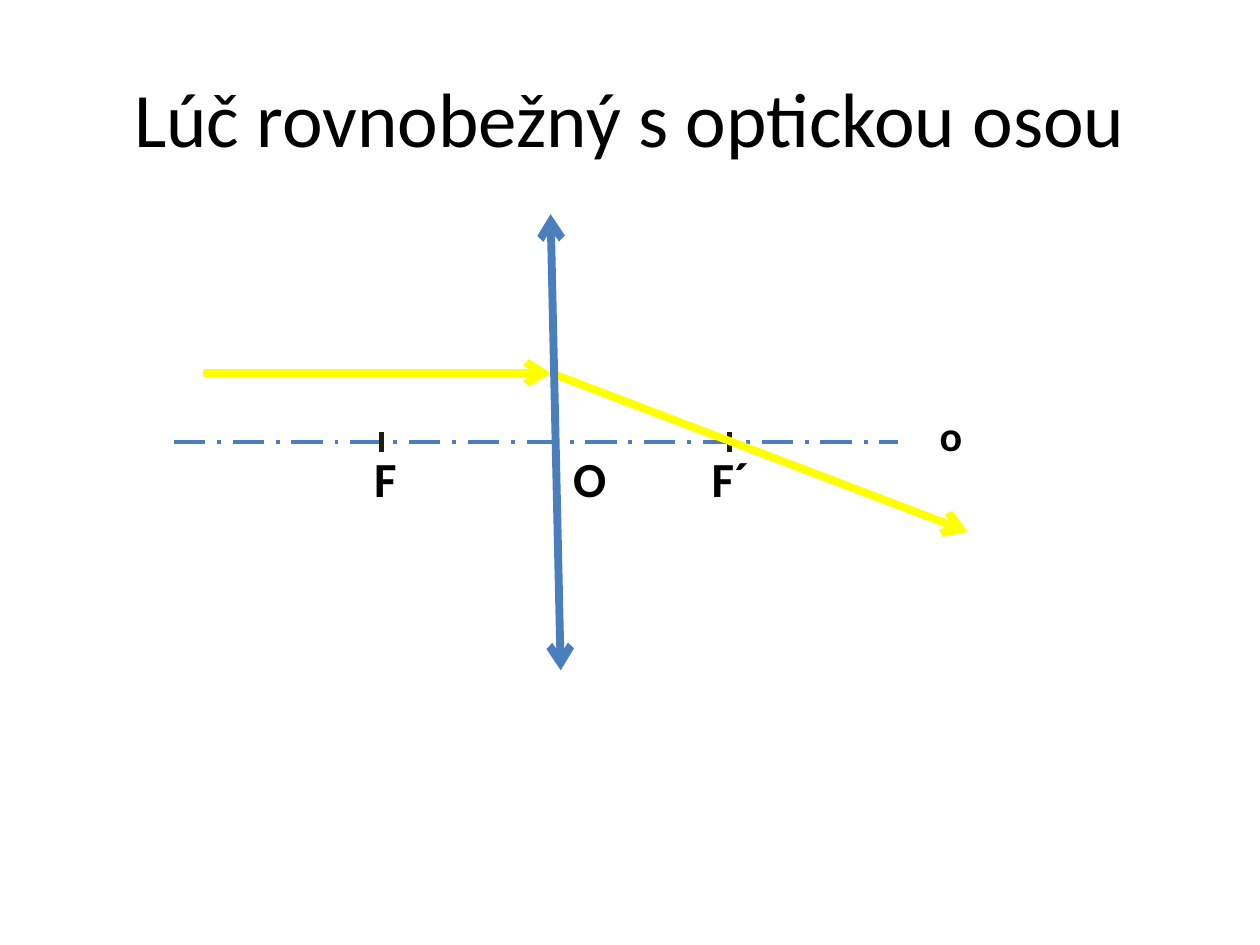
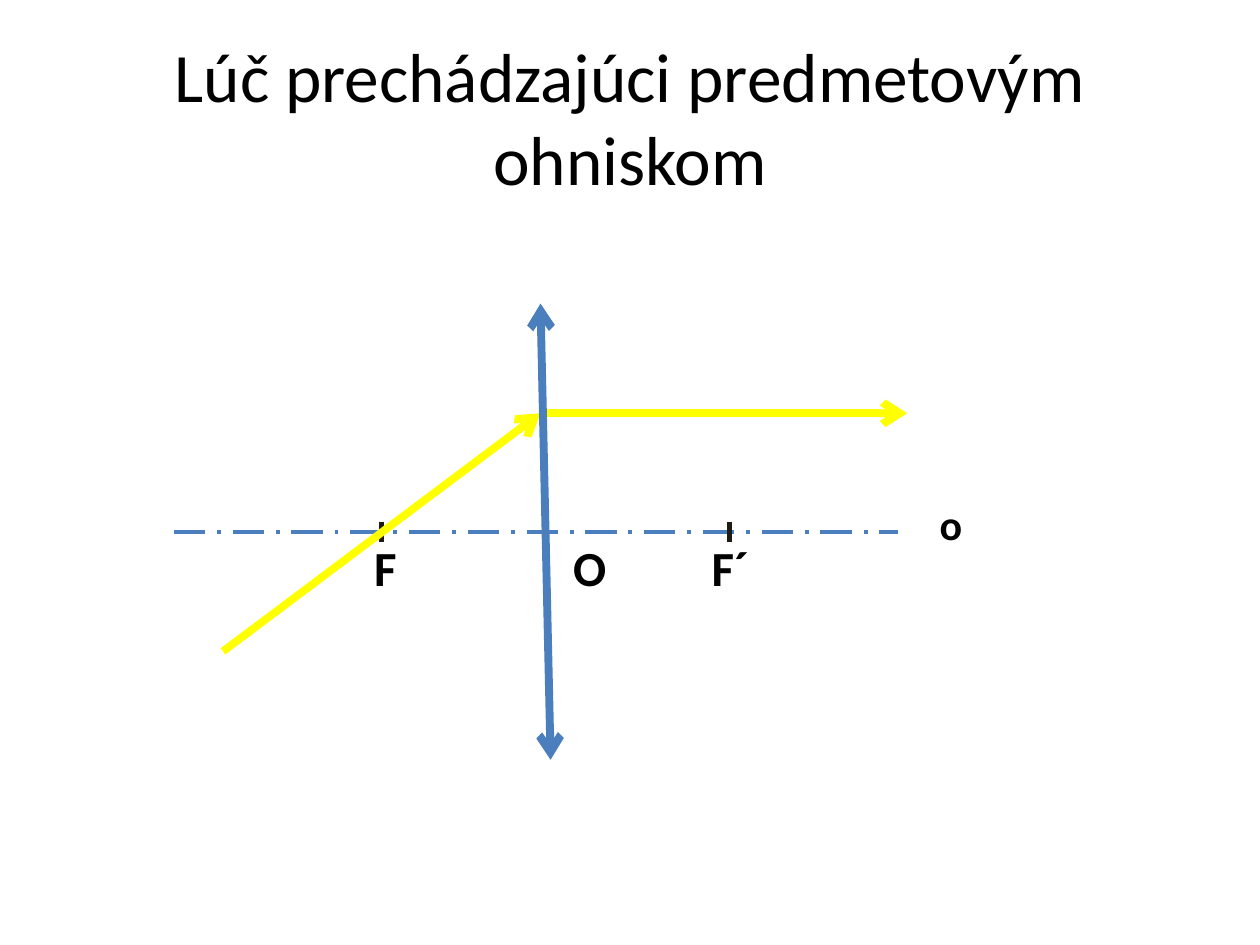
from lxml import etree
from pptx import Presentation
from pptx import util as u
from pptx.dml.color import RGBColor
from pptx.enum import dml, shapes, text
from pptx.oxml.ns import qn

# Content: heights of ray points are measured downwards from the optical axis
DIAGRAMS = [
    {"title": "Lúč rovnobežný s optickou osou", "title_size": 44,
     "axis_y": 3.51, "lens_x": 4.37, "axis_label_width": 0.47,
     "ray": [(1.61, -0.55), (4.37, -0.55), (7.68, 0.71)]},
    {"title": "Lúč prechádzajúci predmetovým ohniskom", "title_size": 39.6,
     "axis_y": 4.22, "lens_x": 4.29, "axis_label_width": 0.38,
     "ray": [(1.77, 0.95), (4.29, -0.94), (7.2, -0.94)]},
]
POINT_LABELS = [("F", 2.87, 0.38), ("F´", 5.55, 0.5), ("O", 4.45, 0.47)]

# Shared look and geometry, in inches
COLORS = {"text": "000000", "optics": "4B7EBC", "tick": "1E1C11", "ray": "FFFF00"}
FONT = "Calibri"
AXIS_LEFT, AXIS_RIGHT = 1.38, 7.13
FOCI = (5.79, 3.03)
TICK_HALF = 0.08
LENS_HALF, LENS_LEAN = 1.81, 0.08
AXIS_LABEL_LEFT, AXIS_LABEL_RISE = 7.36, 0.31


def style_text(paragraph, size, bold=False):
    for run in paragraph.runs:
        run.font.name = FONT
        run.font.size = u.Pt(size)
        run.font.bold = bold
        run.font.color.rgb = RGBColor.from_string(COLORS["text"])


def add_line(slide, start, end, color, width, arrows=(), dash=None):
    points = [u.Inches(value) for value in (*start, *end)]
    connector = slide.shapes.add_connector(shapes.MSO_CONNECTOR.STRAIGHT, *points)
    line = connector.line
    line.color.rgb = RGBColor.from_string(COLORS[color])
    line.width = u.Pt(width)
    if dash:
        line.dash_style = dash
    properties = connector._element.spPr
    for arrow in arrows:
        etree.SubElement(properties.find(qn("a:ln")), qn(f"a:{arrow}"), type="arrow")
    etree.SubElement(properties, qn("a:effectLst"))


def add_label(slide, label, left, top, width, height, size, wrap=False):
    box = slide.shapes.add_textbox(*map(u.Inches, (left, top, width, height)))
    frame = box.text_frame
    frame.text = label
    frame.word_wrap = wrap
    frame.auto_size = text.MSO_AUTO_SIZE.SHAPE_TO_FIT_TEXT
    style_text(frame.paragraphs[0], size, bold=True)


def add_title(slide, wording, size):
    title = slide.shapes.title
    title.left, title.top, title.width, title.height = map(u.Inches, (0.5, 0.3, 9, 1.25))
    frame = title.text_frame
    frame.text = wording
    frame.vertical_anchor = text.MSO_ANCHOR.MIDDLE
    frame.paragraphs[0].alignment = text.PP_ALIGN.CENTER
    style_text(frame.paragraphs[0], size)


def add_diagram(presentation, diagram):
    slide = presentation.slides.add_slide(presentation.slide_layouts[5])
    add_title(slide, diagram["title"], diagram["title_size"])
    axis_y, lens_x = diagram["axis_y"], diagram["lens_x"]

    # Optical axis with focal ticks
    add_line(slide, (AXIS_LEFT, axis_y), (AXIS_RIGHT, axis_y), "optics", 2.25,
             dash=dml.MSO_LINE.LONG_DASH_DOT)
    for focus in FOCI:
        add_line(slide, (focus, axis_y - TICK_HALF), (focus, axis_y + TICK_HALF), "tick", 3)

    # Labels
    for label, left, width in POINT_LABELS:
        add_label(slide, label, left, axis_y, width, 0.57, 28)
    add_label(slide, "o", AXIS_LABEL_LEFT, axis_y - AXIS_LABEL_RISE,
              diagram["axis_label_width"], 0.5, 24, wrap=True)

    # Ray before and after the lens
    ray = [(x, axis_y + height) for x, height in diagram["ray"]]
    for start, end in zip(ray, ray[1:]):
        add_line(slide, start, end, "ray", 4.5, ["tailEnd"])

    # Converging lens
    add_line(slide, (lens_x, axis_y - LENS_HALF), (lens_x + LENS_LEAN, axis_y + LENS_HALF),
             "optics", 4.5, ["headEnd", "tailEnd"])


def main():
    presentation = Presentation()
    presentation.slide_width = u.Inches(10)
    presentation.slide_height = u.Inches(7.5)
    for diagram in DIAGRAMS:
        add_diagram(presentation, diagram)
    presentation.save("out.pptx")


if __name__ == "__main__":
    main()
